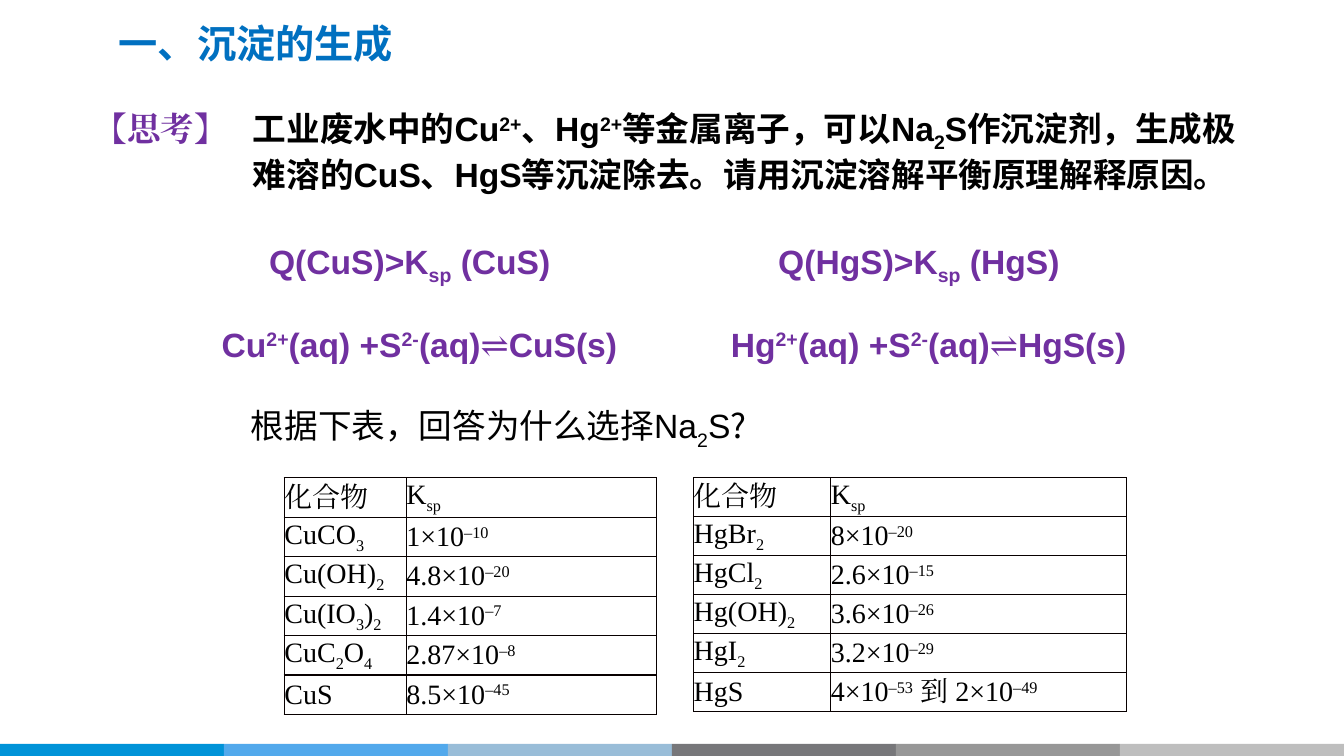
from dataclasses import dataclass

from lxml import etree
from pptx import Presentation
from pptx.dml.color import RGBColor
from pptx.enum import shapes, text
from pptx.oxml import ns
from pptx.util import Inches, Pt


@dataclass(frozen=True)
class Theme:
    title: str = "0070C0"
    accent: str = "7030A0"
    ink: str = "000000"
    paper: str = "FFFFFF"
    border: str = "080000"
    bars: tuple = ("0093D8", "52A9EC", "99BDD8", "77777A", "979797", "BEBEBE")
    sans: str = "Arial"
    serif: str = "Times New Roman"
    chinese: str = "Noto Sans CJK SC"
    symbol: str = "Cambria"
    title_size: int = 28
    body_size: int = 24
    table_size: int = 20


THEME = Theme()
BASELINES = {"^": "30000", "_": "-25000"}
FONTS = {"@": THEME.chinese, "~": THEME.symbol}


def write_text(frame, markup, *, size=THEME.body_size, color=THEME.ink,
               font=THEME.sans, bold=False):
    paragraph = frame.paragraphs[0]
    for part in markup.split("|"):
        mark = part[0]
        marked = mark in BASELINES or mark in FONTS
        run = paragraph.add_run()
        run.text = part[1:] if marked else part
        run.font.size = Pt(size)
        run.font.bold = bold and mark != "~"
        run.font.color.rgb = RGBColor.from_string(color)
        run.font.name = FONTS.get(mark, font)
        properties = run.font._element
        etree.SubElement(properties, ns.qn("a:ea"), typeface=run.font.name)
        if mark in BASELINES:
            properties.set("baseline", BASELINES[mark])


def add_label(slide, box, markup, *, wrap=True, **style):
    shape = slide.shapes.add_textbox(*map(Inches, box))
    shape.text_frame.word_wrap = wrap
    shape.text_frame.auto_size = text.MSO_AUTO_SIZE.SHAPE_TO_FIT_TEXT
    write_text(shape.text_frame, markup, **style)


def add_footer(slide, left, top, width, height):
    bar_width = width / len(THEME.bars)
    for index, color in enumerate(THEME.bars):
        bar = slide.shapes.add_shape(
            shapes.MSO_SHAPE.RECTANGLE, Inches(left + index * bar_width),
            Inches(top), Inches(bar_width), Inches(height))
        bar.shadow.inherit = False
        bar.fill.solid()
        bar.fill.fore_color.rgb = RGBColor.from_string(color)
        bar.line.fill.background()


def add_question(slide, left, top):
    add_label(slide, (left, top, 1.56, 0.5), "【思考】", wrap=False,
              color=THEME.accent, font=THEME.serif, bold=True)
    add_label(slide, (left + 1.58, top, 10.09, 0.91),
              "工业废水中的Cu|^2+|、Hg|^2+|等金属离子，可以Na|_2|S作沉淀剂，"
              "生成极难溶的CuS、HgS等沉淀除去。请用沉淀溶解平衡原理解释原因。",
              bold=True)


def add_equilibrium(slide, left, top, metal):
    style = dict(color=THEME.accent, bold=True)
    add_label(slide, (left + 0.47, top, 3.39, 0.5),
              f"Q({metal}S)>K|_sp| ({metal}S)", **style)
    add_label(slide, (left, top + 0.82, 4.35, 0.5),
              f"{metal}|^2+|(aq) +S|^2-|(aq)|~⇌|{metal}S(s)", **style)


def style_cell(cell):
    cell.margin_left = cell.margin_right = 0
    cell.margin_top = cell.margin_bottom = 0
    cell.vertical_anchor = text.MSO_ANCHOR.MIDDLE
    cell.fill.solid()
    cell.fill.fore_color.rgb = RGBColor.from_string(THEME.paper)
    properties = cell._tc.get_or_add_tcPr()
    for index, side in enumerate(("lnL", "lnR", "lnT", "lnB")):
        line = etree.Element(ns.qn(f"a:{side}"), w=str(Pt(1)))
        fill = etree.SubElement(line, ns.qn("a:solidFill"))
        etree.SubElement(fill, ns.qn("a:srgbClr"), val=THEME.border)
        properties.insert(index, line)


def add_ksp_table(slide, left, top, height, widths, compounds):
    rows = [("化合物", "K|_sp"), *compounds]
    table = slide.shapes.add_table(
        len(rows), len(widths), Inches(left), Inches(top),
        Inches(sum(widths)), Inches(height)).table
    for column, width in zip(table.columns, widths):
        column.width = Inches(width)
    for row_index, row in enumerate(rows):
        for column_index, markup in enumerate(row):
            cell = table.cell(row_index, column_index)
            style_cell(cell)
            write_text(cell.text_frame, markup, size=THEME.table_size,
                       font=THEME.serif)


def main():
    presentation = Presentation()
    presentation.slide_width = Inches(13.33)
    presentation.slide_height = Inches(7.5)
    slide = presentation.slides.add_slide(presentation.slide_layouts[6])

    add_footer(slide, 0, 7.38, 13.33, 0.15)
    add_label(slide, (1.08, 0.14, 2.92, 0.57), "一、沉淀的生成", wrap=False,
              size=THEME.title_size, color=THEME.title, font=THEME.chinese,
              bold=True)
    add_question(slide, 0.83, 1.02)
    add_equilibrium(slide, 2.1, 2.34, "Cu")
    add_equilibrium(slide, 7.15, 2.34, "Hg")
    add_label(slide, (2.39, 3.97, 6.78, 0.5),
              "@根据下表，回答为什么选择|Na|_2|S|@?")
    add_ksp_table(slide, 2.82, 4.74, 2.35, (1.21, 2.48), [
        ("CuCO|_3", "1×10|^–10"),
        ("Cu(OH)|_2", "4.8×10|^–20"),
        ("Cu(IO|_3|)|_2", "1.4×10|^–7"),
        ("CuC|_2|O|_4", "2.87×10|^–8"),
        ("CuS", "8.5×10|^–45"),
    ])
    add_ksp_table(slide, 6.88, 4.74, 2.32, (1.36, 2.93), [
        ("HgBr|_2", "8×10|^–20"),
        ("HgCl|_2", "2.6×10|^–15"),
        ("Hg(OH)|_2", "3.6×10|^–26"),
        ("HgI|_2", "3.2×10|^–29"),
        ("HgS", "4×10|^–53| 到 2×10|^–49"),
    ])
    presentation.save("out.pptx")


if __name__ == "__main__":
    main()
